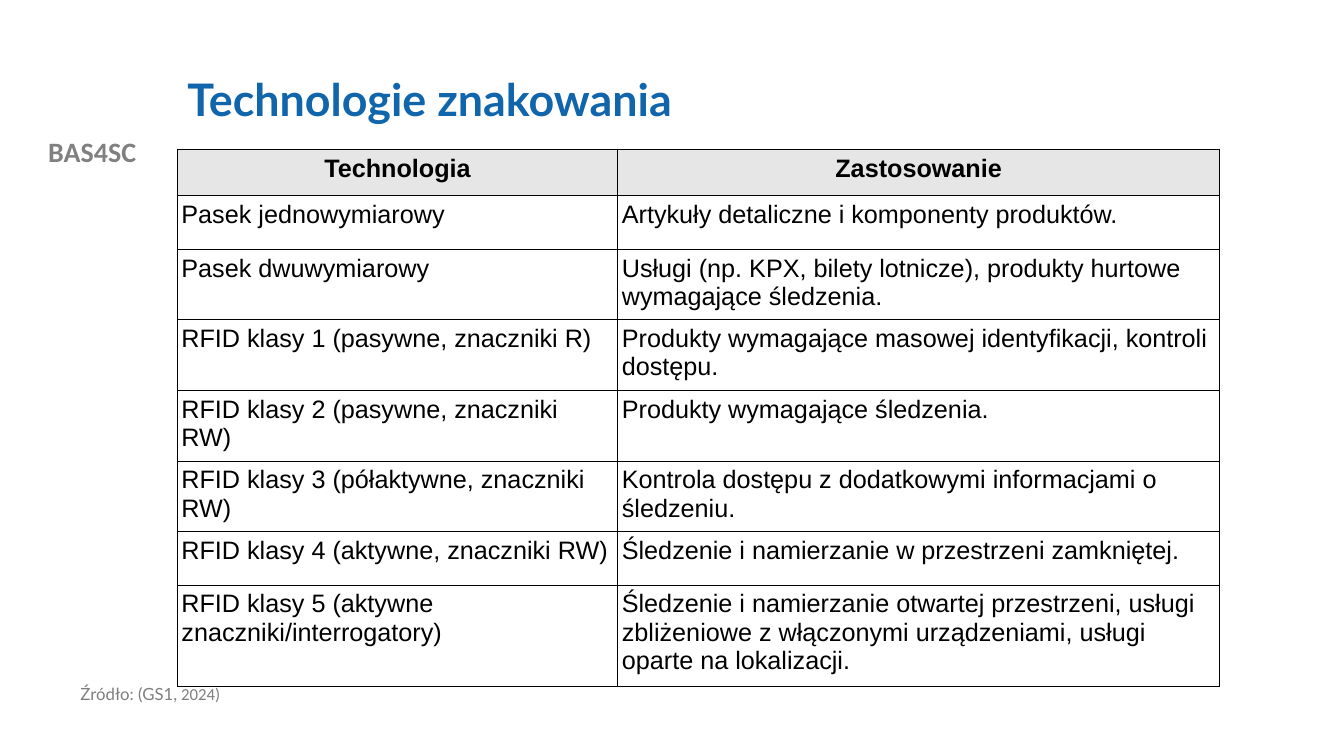
import pptx
import pptx.dml.color
import pptx.enum.text
import pptx.oxml
import pptx.oxml.ns
import pptx.util

Pt = pptx.util.Pt
ALIGN = pptx.enum.text.PP_ALIGN
ANCHOR = pptx.enum.text.MSO_ANCHOR

ROWS = [
    ("Technologia", "Zastosowanie"),
    ("Pasek jednowymiarowy", "Artykuły detaliczne i komponenty produktów."),
    ("Pasek dwuwymiarowy",
     "Usługi (np. KPX, bilety lotnicze), produkty hurtowe wymagające śledzenia."),
    ("RFID klasy 1 (pasywne, znaczniki R)",
     "Produkty wymagające masowej identyfikacji, kontroli dostępu."),
    ("RFID klasy 2 (pasywne, znaczniki RW)", "Produkty wymagające śledzenia."),
    ("RFID klasy 3 (półaktywne, znaczniki RW)",
     "Kontrola dostępu z dodatkowymi informacjami o śledzeniu."),
    ("RFID klasy 4 (aktywne, znaczniki RW)",
     "Śledzenie i namierzanie w przestrzeni zamkniętej."),
    ("RFID klasy 5 (aktywne znaczniki/interrogatory)",
     "Śledzenie i namierzanie otwartej przestrzeni, usługi zbliżeniowe "
     "z włączonymi urządzeniami, usługi oparte na lokalizacji."),
]
COLUMN_WIDTHS = [314.6, 429.9]
ROW_HEIGHTS = [33.2] + [38.2] * 6 + [62.6]


def color(hex_code):
    return pptx.dml.color.RGBColor.from_string(hex_code)


def add_span(para, text, *, font, size, ink, bold=False):
    span = para.add_run()
    span.text = text
    span.font.name = font
    span.font.size = Pt(size)
    span.font.bold = bold
    span.font.color.rgb = color(ink)


def place(shape, left, top, width, height):
    shape.left, shape.top = Pt(left), Pt(top)
    shape.width, shape.height = Pt(width), Pt(height)


def add_borders(cell, hex_code, width):
    properties = cell._tc.get_or_add_tcPr()
    for side in ("lnL", "lnR", "lnT", "lnB"):
        properties.append(pptx.oxml.parse_xml(
            f'<a:{side} {pptx.oxml.ns.nsdecls("a")} w="{int(Pt(width))}">'
            f'<a:solidFill><a:srgbClr val="{hex_code}"/></a:solidFill></a:{side}>'))


class SlideBuilder:
    """Adds elements in the deck's style to one slide."""

    blue, grey, source_grey = "1065AB", "808080", "7F7F7F"
    black, header_fill = "000000", "E7E6E6"

    def __init__(self, deck):
        self.slide = deck.slides.add_slide(deck.slide_layouts[5])

    def title(self, text, *frame):
        title = self.slide.shapes.title
        place(title, *frame)
        title.text_frame.vertical_anchor = ANCHOR.MIDDLE
        para = title.text_frame.paragraphs[0]
        para.alignment = ALIGN.LEFT
        para.line_spacing = 0.9
        add_span(para, text, font="Lato", size=32, ink=self.blue, bold=True)

    def text_box(self, *frame):
        """Return the first paragraph of a new wrapping box."""
        box = self.slide.shapes.add_textbox(*(Pt(length) for length in frame))
        box.text_frame.word_wrap = True
        return box.text_frame.paragraphs[0]

    def label(self, text, *frame):
        para = self.text_box(*frame)
        para.alignment = ALIGN.CENTER
        add_span(para, text, font="Calibri", size=20, ink=self.grey, bold=True)

    def source(self, parts, *frame):
        para = self.text_box(*frame)
        para.line_spacing = 0.9
        for text, font in parts:
            add_span(para, text, font=font, size=12, ink=self.source_grey)

    def table(self, rows, left, top, widths, heights):
        table = self.slide.shapes.add_table(
            len(rows), len(widths), Pt(left), Pt(top),
            Pt(sum(widths)), Pt(sum(heights))).table
        table.horz_banding = False
        for column, width in zip(table.columns, widths):
            column.width = Pt(width)
        for row, height, texts in zip(table.rows, heights, rows):
            row.height = Pt(height)
            for cell, text in zip(row.cells, texts):
                self.cell(cell, text, header=texts is rows[0])

    def cell(self, cell, text, header):
        cell.margin_left = cell.margin_right = Pt(2.9)
        cell.margin_top = cell.margin_bottom = Pt(3.6)
        add_borders(cell, self.black, 0.57)
        if header:
            cell.fill.solid()
            cell.fill.fore_color.rgb = color(self.header_fill)
        else:
            cell.fill.background()
        para = cell.text_frame.paragraphs[0]
        para.alignment = ALIGN.CENTER if header else ALIGN.LEFT
        add_span(para, text, font="Arial", size=18, ink=self.black, bold=header)


def main():
    deck = pptx.Presentation()
    deck.slide_width, deck.slide_height = Pt(960), Pt(540)
    builder = SlideBuilder(deck)
    builder.label("BAS4SC", 0, 92.2, 131.8, 31)
    builder.title("Technologie znakowania", 126.7, 28.8, 767.5, 87.8)
    builder.table(ROWS, 126.7, 106.6, COLUMN_WIDTHS, ROW_HEIGHTS)
    builder.source([("Źródło: (GS1,", "Lato"), (" 2024)", "Calibri")],
                   50.4, 486.7, 360.7, 37.4)
    deck.save("out.pptx")


if __name__ == "__main__":
    main()
